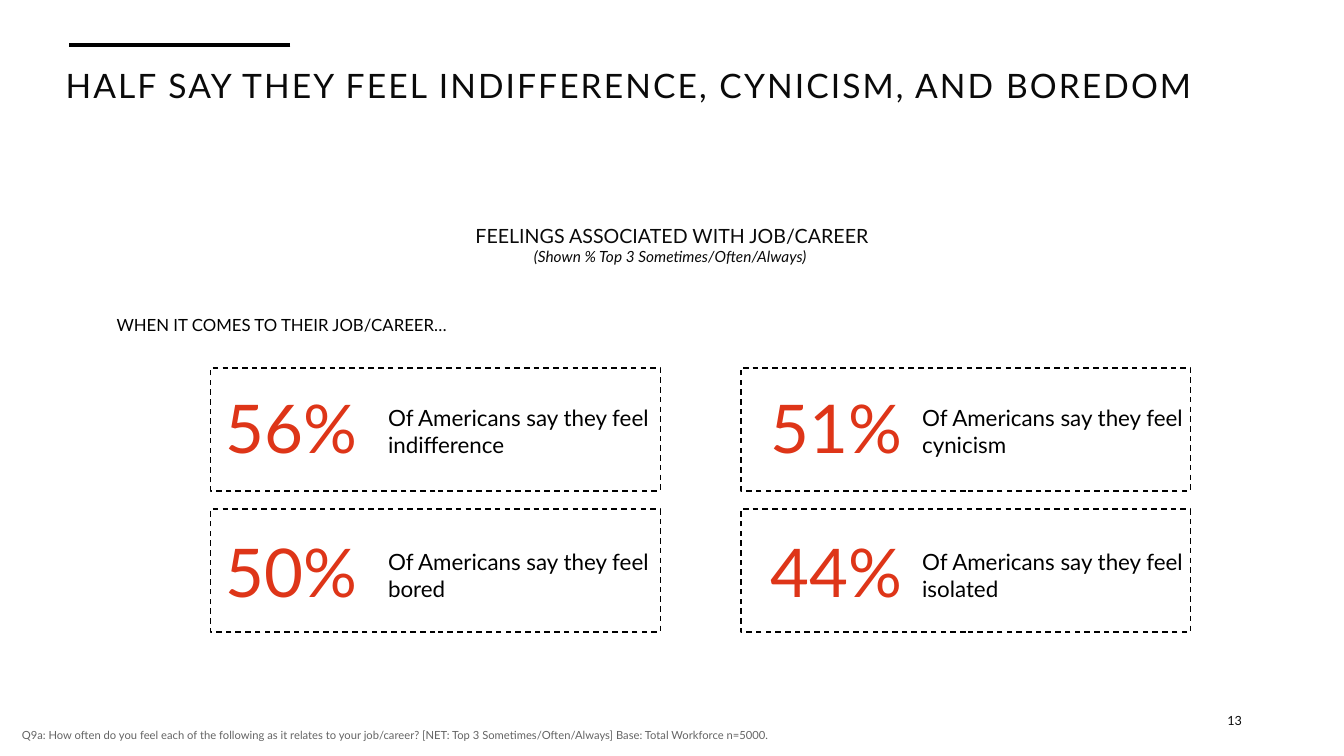
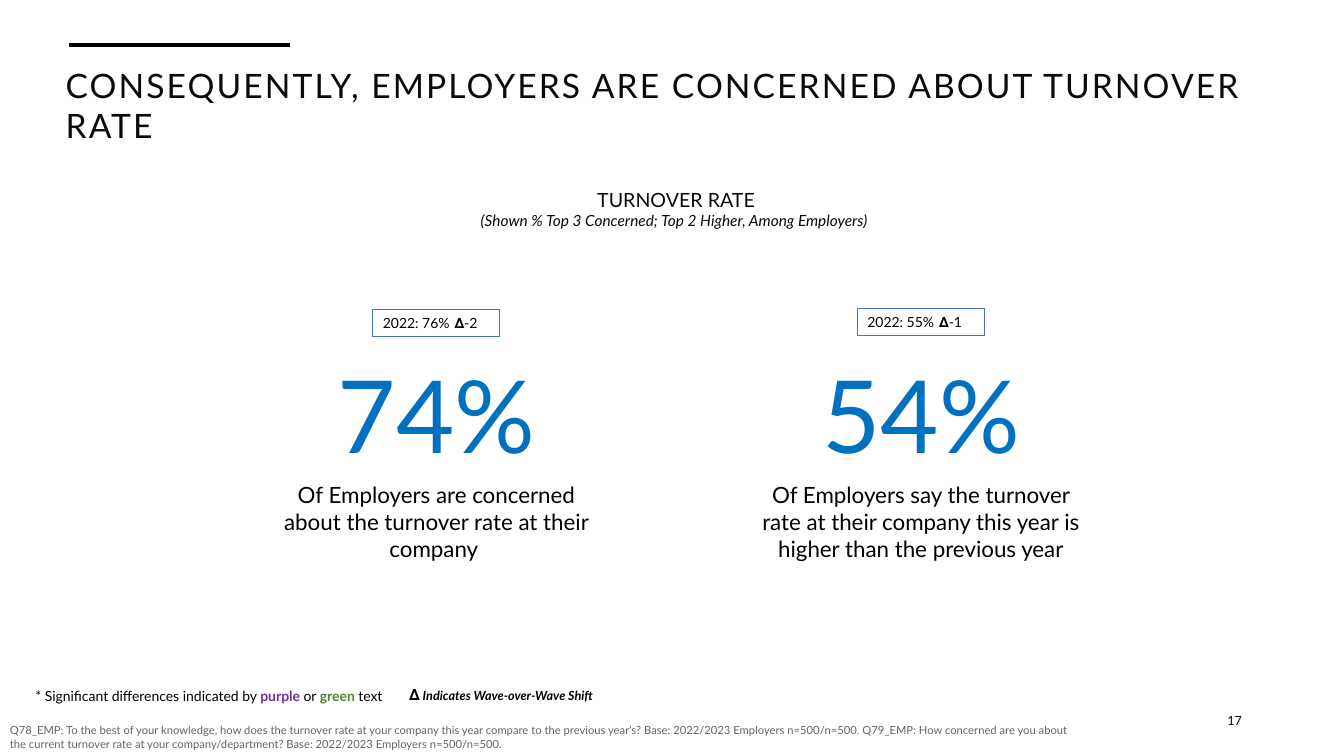
from dataclasses import dataclass

from lxml import etree
from pptx import Presentation
from pptx.dml.color import RGBColor
from pptx.enum.dml import MSO_LINE
from pptx.enum.shapes import MSO_CONNECTOR, MSO_SHAPE
from pptx.enum.text import MSO_ANCHOR, MSO_AUTO_SIZE, PP_ALIGN
from pptx.oxml.ns import qn
from pptx.util import Cm, Pt

LEFT, CENTER, RIGHT = PP_ALIGN.LEFT, PP_ALIGN.CENTER, PP_ALIGN.RIGHT
TOP, MIDDLE = MSO_ANCHOR.TOP, MSO_ANCHOR.MIDDLE
RECT, STRAIGHT, DASH = MSO_SHAPE.RECTANGLE, MSO_CONNECTOR.STRAIGHT, MSO_LINE.DASH
FIT_NONE = MSO_AUTO_SIZE.NONE
TITLE_ONLY = 5

FONT = "Lato"
COLORS = {
    "black": "000000",
    "ink": "0A0A0A",
    "note": "646464",
    "red": "DE3518",
    "blue": "0070C0",
    "tag": "4472C4",
    "purple": "7030A0",
    "green": "548235",
}


@dataclass(frozen=True)
class Run:
    text: str
    size: float
    color: str = "black"
    bold: bool = False
    italic: bool = False


@dataclass(frozen=True)
class Box:
    """Left, top, width and height in centimetres."""
    x: float
    y: float
    w: float
    h: float

    def emu(self) -> tuple:
        return Cm(self.x), Cm(self.y), Cm(self.w), Cm(self.h)


@dataclass(frozen=True)
class Track:
    """Start of a card row or column, and of its figure and label."""
    card: float
    figure: float
    label: float


@dataclass(frozen=True)
class Card:
    row: int
    col: int
    figure: str
    feeling: str


@dataclass(frozen=True)
class Stat:
    center: float
    tag_top: float
    before: str
    shift: str
    figure: str
    text: str


COLS = (Track(5.31, 4.37, 9.53), Track(18.67, 18.11, 22.99))
ROWS = (Track(9.27, 9.6, 10.06), Track(12.83, 13.23, 13.69))
CARDS = (
    Card(0, 0, "56%", "indifference"),
    Card(0, 1, "51%", "cynicism"),
    Card(1, 0, "50%", "bored"),
    Card(1, 1, "44%", "isolated"),
)
STATS = (
    Stat(11, 7.8, "2022: 76%", "-2", "74%",
         "Of Employers are concerned about the turnover rate at their company "),
    Stat(23.21, 7.77, "2022: 55%", "-1", "54%",
         "Of Employers say the turnover rate at their company this year is "
         "higher than the previous year"),
)


def rgb(name: str) -> RGBColor:
    return RGBColor.from_string(COLORS[name])


# Text
def write(tf, *paragraphs, align=LEFT, anchor=TOP, after: float = 0) -> None:
    """Each paragraph is a list of runs."""
    tf.word_wrap = True
    tf.auto_size = FIT_NONE
    tf.vertical_anchor = anchor
    for i, runs in enumerate(paragraphs):
        p = tf.add_paragraph() if i else tf.paragraphs[0]
        p.alignment = align
        p.space_after = Pt(after)
        for run in runs:
            r = p.add_run()
            r.text = run.text
            r.font.name = FONT
            r.font.size = Pt(run.size)
            r.font.bold = run.bold
            r.font.italic = run.italic
            r.font.color.rgb = rgb(run.color)


def add_text(shapes, box: Box, *paragraphs, **style) -> None:
    write(shapes.add_textbox(*box.emu()).text_frame, *paragraphs, **style)


def add_frame(shapes, box: Box, color: str, width: float):
    sp = shapes.add_shape(RECT, *box.emu())
    sp.shadow.inherit = False
    sp.fill.background()
    sp.line.color.rgb = rgb(color)
    sp.line.width = Pt(width)
    return sp


# Parts found on every slide
def add_bar(s) -> None:
    bar = s.shapes.add_connector(STRAIGHT, Cm(7.32), Cm(1.14), Cm(1.73), Cm(1.14))
    bar.line.color.rgb = rgb("black")
    bar.line.width = Pt(3)
    etree.SubElement(bar.element.spPr, qn("a:effectLst"))


def add_title(s, text: str, height: float) -> None:
    title = s.shapes.title
    title.left, title.top, title.width, title.height = Box(1.4, 1.5, 31.55, height).emu()
    write(title.text_frame, [Run(text, 24, "ink")])
    for props in title.element.iter(qn("a:rPr")):
        props.set("spc", "150")


def new_slide(prs, title: str, title_height: float, page: str,
              note: str, note_box: Box):
    s = prs.slides.add_slide(prs.slide_layouts[TITLE_ONLY])
    add_bar(s)
    add_title(s, title, title_height)
    add_text(s.shapes, note_box, [Run(note, 8, "note")])
    add_text(s.shapes, Box(23.93, 17.65, 7.62, 1.02), [Run(page, 9, "ink")],
             align=RIGHT, anchor=MIDDLE)
    return s


def add_heading(s, x: float, y: float, text: str, basis: str) -> None:
    add_text(s.shapes, Box(x, y, 10.62, 1.32), [Run(text, 14, "ink")],
             [Run(basis, 11, "ink", italic=True)], align=CENTER)


# Feelings slide
def add_card(s, card: Card) -> None:
    col, row = COLS[card.col], ROWS[card.row]
    frame = add_frame(s.shapes, Box(col.card, row.card, 11.33, 3.1), "black", 1)
    frame.line.dash_style = DASH
    add_text(s.shapes, Box(col.figure, row.figure, 5.94, 2.41),
             [Run(card.figure, 48, "red")], align=CENTER, after=12)
    add_text(s.shapes, Box(col.label, row.label, 7.11, 1.63),
             [Run(f"Of Americans say they feel {card.feeling}", 16)])


def feelings_slide(prs) -> None:
    s = new_slide(
        prs, "HALF SAY THEY FEEL INDIFFERENCE, CYNICISM, AND BOREDOM", 1.27, "13",
        "Q9a: How often do you feel each of the following as it relates to your "
        "job/career? [NET: Top 3 Sometimes/Often/Always] Base: Total Workforce n=5000.",
        Box(0.3, 18.24, 27.43, 0.61))
    add_heading(s, 11.63, 5.51, "FEELINGS ASSOCIATED WITH JOB/CAREER",
                "(Shown % Top 3 Sometimes/Often/Always) ")
    add_text(s.shapes, Box(2.49, 7.8, 9.14, 0.76),
             [Run("WHEN IT COMES TO THEIR JOB/CAREER… ", 12)], align=RIGHT)
    for card in CARDS:
        add_card(s, card)


# Turnover slide
def add_stat(s, stat: Stat) -> None:
    tag = s.shapes.add_group_shape().shapes
    x = stat.center - 1.6
    frame = add_frame(tag, Box(x, stat.tag_top, 3.2, 0.69), "tag", 0.75)
    write(frame.text_frame, [Run(stat.before, 10)])
    add_text(tag, Box(x + 1.52, stat.tag_top, 1.65, 0.71),
             [Run("∆", 10, bold=True), Run(stat.shift, 10)], align=CENTER)
    add_text(s.shapes, Box(stat.center - 2.97, 8.76, 5.94, 3.35),
             [Run(stat.figure, 72, "blue")], align=CENTER, after=12)
    add_text(s.shapes, Box(stat.center - 4.45, 12.01, 8.9, 2.31),
             [Run(stat.text, 16)], align=CENTER)


def add_legend(s) -> None:
    add_text(s.shapes, Box(9.45, 17.15, 5.74, 0.74),
             [Run("∆", 11, bold=True),
              Run(" Indicates Wave-over-Wave Shift", 9, bold=True, italic=True)],
             align=RIGHT)
    add_text(s.shapes, Box(0.64, 17.2, 9.6, 0.69),
             [Run("* Significant differences indicated by ", 10),
              Run("purple ", 10, "purple", bold=True), Run("or ", 10),
              Run("green ", 10, "green", bold=True), Run("text", 10)])


def turnover_slide(prs) -> None:
    s = new_slide(
        prs, "CONSEQUENTLY, EMPLOYERS ARE CONCERNED ABOUT TURNOVER RATE", 2.31, "17",
        "Q78_EMP: To the best of your knowledge, how does the turnover rate at your "
        "company this year compare to the previous year’s? Base: 2022/2023 Employers "
        "n=500/n=500. Q79_EMP: How concerned are you about the current turnover rate "
        "at your company/department? Base: 2022/2023 Employers n=500/n=500.",
        Box(0, 18.11, 27.43, 0.94))
    add_heading(s, 11.73, 4.6, "TURNOVER RATE",
                "(Shown % Top 3 Concerned; Top 2 Higher, Among Employers) ")
    for stat in STATS:
        add_stat(s, stat)
    add_legend(s)


def main() -> None:
    prs = Presentation()
    prs.slide_width, prs.slide_height = Cm(33.87), Cm(19.05)
    feelings_slide(prs)
    turnover_slide(prs)
    prs.save("out.pptx")


if __name__ == "__main__":
    main()
